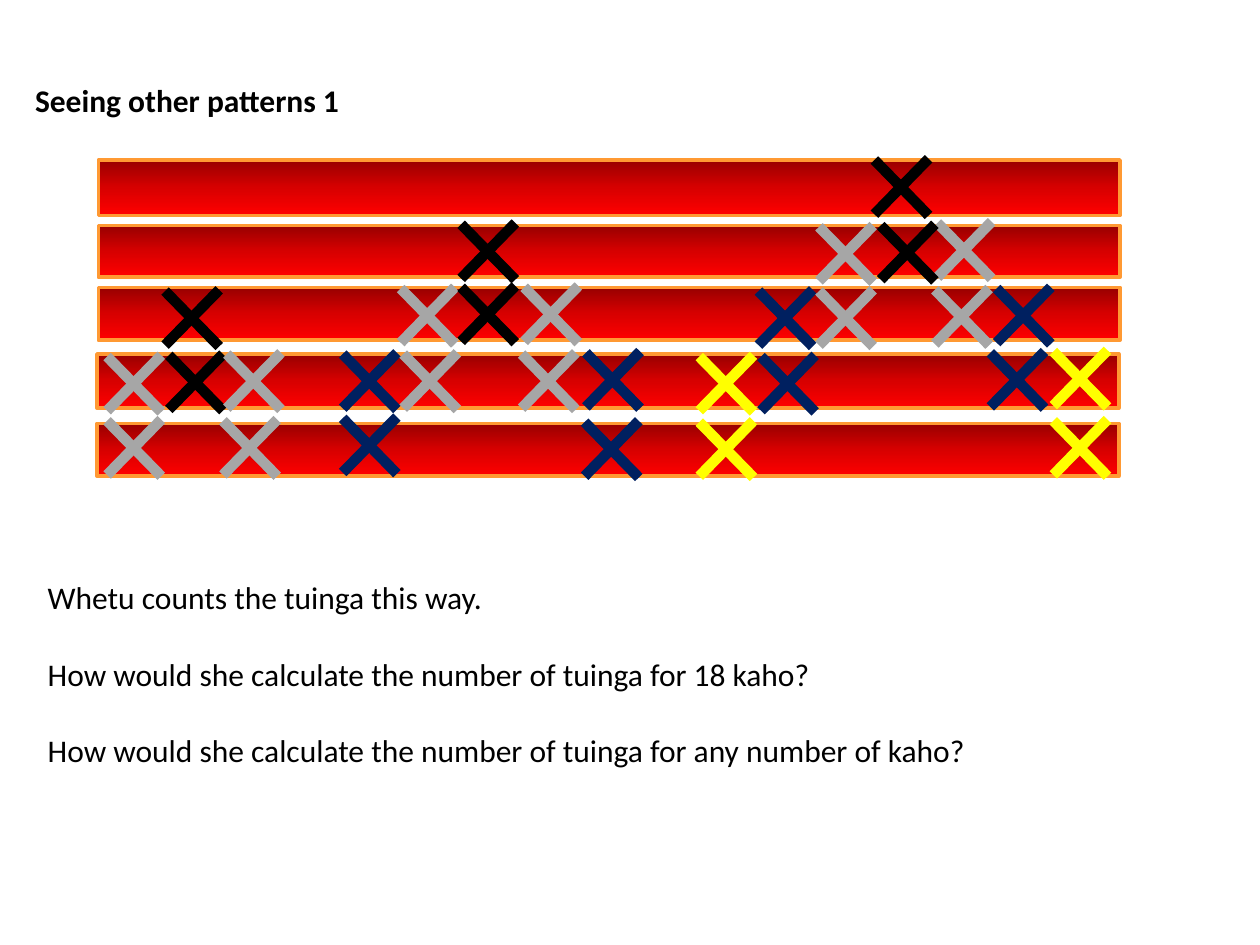
from copy import deepcopy
from dataclasses import dataclass

from lxml import etree
from pptx import Presentation
from pptx.dml.color import RGBColor
from pptx.enum.shapes import MSO_CONNECTOR, MSO_SHAPE
from pptx.enum.text import MSO_AUTO_SIZE
from pptx.oxml.ns import qn
from pptx.util import Inches, Pt

RECT = MSO_SHAPE.RECTANGLE
STRAIGHT = MSO_CONNECTOR.STRAIGHT
FIT_TEXT = MSO_AUTO_SIZE.SHAPE_TO_FIT_TEXT

COLORS = {
    "black": "000000",
    "grey": "A6A6A6",
    "navy": "002060",
    "yellow": "FFFF00",
    "orange": "FF9933",
    "red_dark": "970000",
    "red_mid": "D70000",
    "red": "FF0000",
}
BAR_STOPS = ((0, "red_dark"), (0.5, "red_mid"), (1, "red"))
BAR_WIDTH = 8.11
CROSS_WIDTH, CROSS_HEIGHT, CROSS_LIFT = 0.43, 0.44, 0.01


@dataclass
class Kaho:
    left: float
    top: float
    height: float


@dataclass
class Tuinga:
    left: float
    top: float
    color: str


@dataclass
class Note:
    left: float
    top: float
    width: float
    height: float
    lines: tuple
    bold: bool = False


KAHO = [
    Kaho(0.78, 1.27, 0.44),
    Kaho(0.78, 1.79, 0.41),
    Kaho(0.78, 2.28, 0.42),
    Kaho(0.77, 2.81, 0.43),
    Kaho(0.77, 3.36, 0.42),
]

TUINGA = [
    Tuinga(0.85, 3.34, "grey"),
    Tuinga(1.77, 3.34, "grey"),
    Tuinga(1.34, 2.82, "black"),
    Tuinga(0.85, 2.83, "grey"),
    Tuinga(1.8, 2.81, "grey"),
    Tuinga(1.31, 2.31, "black"),
    Tuinga(2.72, 3.32, "navy"),
    Tuinga(4.16, 2.28, "grey"),
    Tuinga(3.66, 1.78, "black"),
    Tuinga(2.72, 2.81, "navy"),
    Tuinga(3.2, 2.81, "grey"),
    Tuinga(3.18, 2.29, "grey"),
    Tuinga(4.64, 3.35, "navy"),
    Tuinga(4.14, 2.81, "grey"),
    Tuinga(4.65, 2.8, "navy"),
    Tuinga(3.66, 2.28, "black"),
    Tuinga(5.55, 3.35, "yellow"),
    Tuinga(7.91, 2.29, "navy"),
    Tuinga(6.5, 1.8, "grey"),
    Tuinga(5.55, 2.83, "yellow"),
    Tuinga(6.04, 2.83, "navy"),
    Tuinga(6.02, 2.31, "navy"),
    Tuinga(8.36, 3.34, "yellow"),
    Tuinga(7.86, 2.8, "navy"),
    Tuinga(8.36, 2.79, "yellow"),
    Tuinga(6.5, 2.31, "grey"),
    Tuinga(7.44, 1.77, "grey"),
    Tuinga(7.42, 2.3, "grey"),
    Tuinga(6.99, 1.79, "black"),
    Tuinga(6.94, 1.27, "black"),
]

NOTES = [
    Note(0.28, 4.54, 9.45, 1.62, (
        "Whetu counts the tuinga this way.",
        "How would she calculate the number of tuinga for 18 kaho?",
        "How would she calculate the number of tuinga for any number of kaho?",
    )),
    Note(0.18, 0.59, 4.86, 0.4, ("Seeing other patterns 1",), True),
]


def rgb(name: str) -> RGBColor:
    return RGBColor.from_string(COLORS[name])


def draw_kaho(s, kaho: Kaho) -> None:
    sp = s.shapes.add_shape(RECT, Inches(kaho.left), Inches(kaho.top),
                            Inches(BAR_WIDTH), Inches(kaho.height))
    sp.shadow.inherit = False
    sp.line.color.rgb = rgb("orange")
    sp.line.width = Pt(2)
    sp.fill.gradient()
    sp.fill.gradient_angle = 270
    stops = sp._element.spPr.find(qn("a:gradFill")).find(qn("a:gsLst"))
    stops.insert(1, deepcopy(stops[0]))
    for stop, (position, color) in zip(sp.fill.gradient_stops, BAR_STOPS):
        stop.position = position
        stop.color.rgb = rgb(color)


def draw_tuinga(s, cross: Tuinga) -> None:
    right, lifted = cross.left + CROSS_WIDTH, cross.top - CROSS_LIFT
    for x1, x2, y in ((cross.left, right, cross.top), (right, cross.left, lifted)):
        line = s.shapes.add_connector(STRAIGHT, Inches(x1), Inches(y),
                                      Inches(x2), Inches(y + CROSS_HEIGHT))
        line.line.color.rgb = rgb(cross.color)
        line.line.width = Pt(6)
        etree.SubElement(line._element.spPr, qn("a:effectLst"))


def draw_note(s, note: Note) -> None:
    sp = s.shapes.add_textbox(Inches(note.left), Inches(note.top),
                              Inches(note.width), Inches(note.height))
    tf = sp.text_frame
    tf.word_wrap = True
    tf.auto_size = FIT_TEXT
    font_format = {"name": "Calibri", "size": Pt(18), "bold": note.bold}
    for i, text in enumerate(note.lines):
        p = tf.add_paragraph() if i else tf.paragraphs[0]
        p.space_before = Pt(22 if i else 0)
        r = p.add_run()
        r.text = text
        r.font.color.rgb = rgb("black")
        for key, value in font_format.items():
            setattr(r.font, key, value)


def main() -> None:
    """Build the slide of tuinga patterns on five kaho."""
    prs = Presentation()
    prs.slide_width, prs.slide_height = Inches(10), Inches(7.5)
    s = prs.slides.add_slide(prs.slide_layouts[6])
    for draw, items in ((draw_kaho, KAHO), (draw_tuinga, TUINGA), (draw_note, NOTES)):
        for item in items:
            draw(s, item)
    prs.save("out.pptx")


if __name__ == "__main__":
    main()
